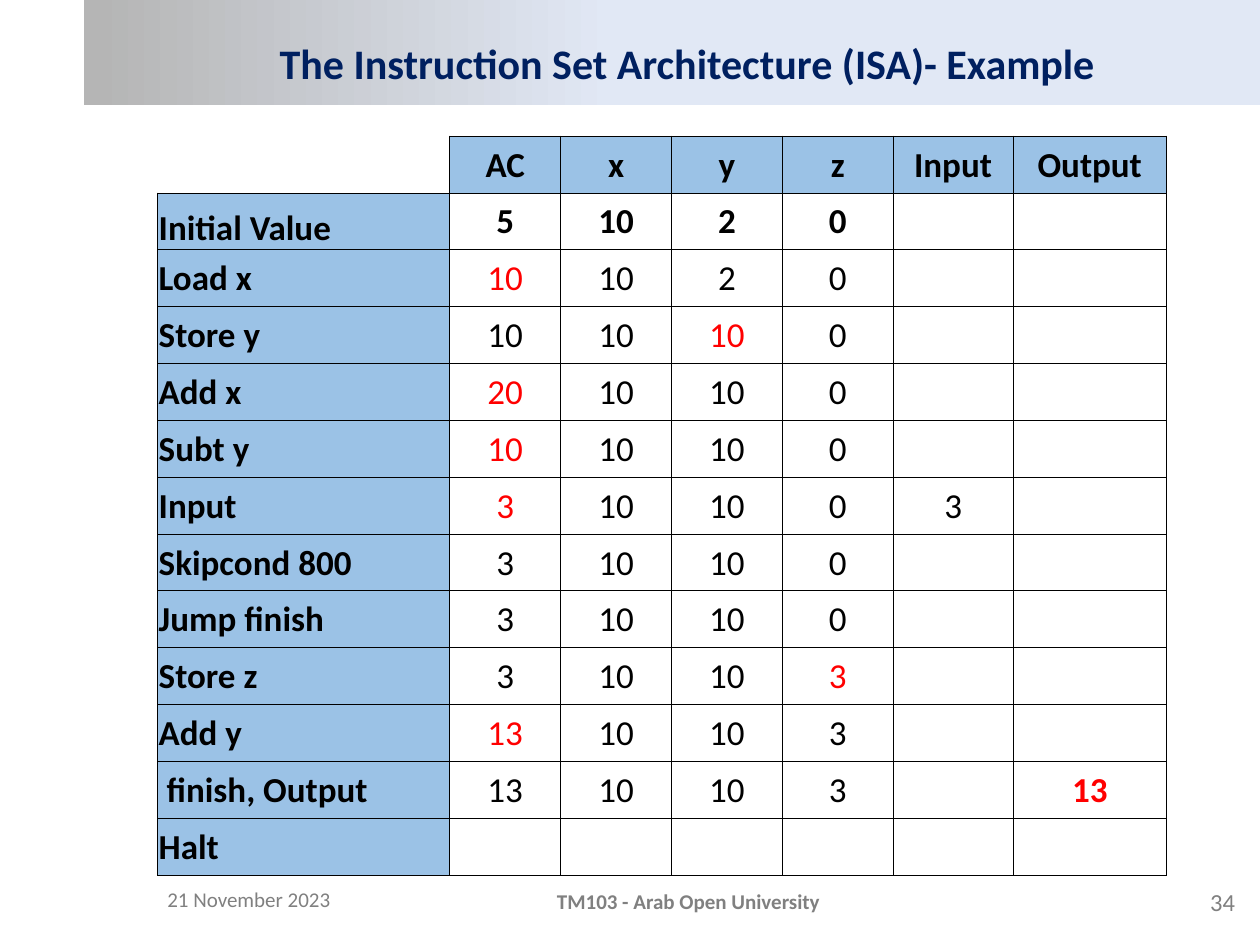
from dataclasses import dataclass

import pptx
import pptx.dml.color
import pptx.enum.text
import pptx.oxml
import pptx.oxml.ns
import pptx.util

Inches = pptx.util.Inches
Align = pptx.enum.text.PP_ALIGN
Anchor = pptx.enum.text.MSO_ANCHOR

WIDTH, HEIGHT = 10, 7.5
FONT = "Calibri"
BLACK, RED, GRAY, NAVY, BLUE = "000000", "FF0000", "808080", "002060", "9BC2E6"
TABLE_LEFT, TABLE_TOP, TABLE_HEIGHT = 1.25, 1.08, 5.87
COLUMN_WIDTHS = [2.32, 0.88, 0.88, 0.88, 0.88, 0.95, 1.22]


@dataclass
class Step:
    label: str
    values: str = ""
    changed: int = 0
    input: str = ""
    output: str = ""

    def cells(self) -> list[str]:
        registers = self.values.split() or [""] * 4
        return [self.label, *registers, self.input, self.output]


@dataclass
class Footer:
    text: str
    left: float
    top: float
    width: float
    size: int
    align: int
    bold: bool = False


HEADERS = ["", "AC", "x", "y", "z", "Input", "Output"]
STEPS = [
    Step("Initial Value", "5 10 2 0"),
    Step("Load x", "10 10 2 0", 1),
    Step("Store y", "10 10 10 0", 3),
    Step("Add x", "20 10 10 0", 1),
    Step("Subt y", "10 10 10 0", 1),
    Step("Input", "3 10 10 0", 1, input="3"),
    Step("Skipcond 800", "3 10 10 0"),
    Step("Jump finish", "3 10 10 0"),
    Step("Store z", "3 10 10 3", 4),
    Step("Add y", "13 10 10 3", 1),
    Step(" finish, Output", "13 10 10 3", 6, output="13"),
    Step("Halt"),
]
FOOTERS = [
    Footer("21 November 2023", 1.23, 6.94, 2.33, 12, Align.LEFT),
    Footer("TM103 - Arab Open University", 3.88, 6.95, 3.17, 12, Align.CENTER, True),
    Footer("34", 7.57, 6.96, 2.33, 14, Align.RIGHT),
]


def color(value: str) -> pptx.dml.color.RGBColor:
    return pptx.dml.color.RGBColor.from_string(value)


def write(frame, text: str, size: int, ink: str, bold: bool, align: int) -> None:
    frame.text = text
    para = frame.paragraphs[0]
    para.alignment = align
    for font in [para.font, *(span.font for span in para.runs)]:
        font.name = FONT
        font.size = pptx.util.Pt(size)
        font.bold = bold
        font.color.rgb = color(ink)


def add_band(page) -> None:
    left = WIDTH / 15
    band = page.shapes.add_shape(
        pptx.enum.shapes.MSO_SHAPE.RECTANGLE,
        Inches(left), 0, Inches(WIDTH - left), Inches(HEIGHT / 9),
    )
    band.shadow.inherit = False
    band.line.fill.background()
    band.fill.gradient()
    band.fill.gradient_angle = 0
    for stop, (position, shade) in zip(
        band.fill.gradient_stops, [(0.01, "B5B5B5"), (0.45, "E1E8F5")]
    ):
        stop.position = position
        stop.color.rgb = color(shade)
    page.shapes._spTree.insert(2, band._element)


def format_title(page) -> None:
    title = page.shapes.title
    title.left, title.top = Inches(0.91), Inches(0.25)
    title.width, title.height = Inches(9.09), Inches(0.5)
    frame = title.text_frame
    frame.vertical_anchor = Anchor.MIDDLE
    write(frame, "The Instruction Set Architecture (ISA)- Example", 24, NAVY, True, Align.CENTER)


def set_borders(cell, sides: str) -> None:
    properties = cell._tc.get_or_add_tcPr()
    for side in sides:
        properties.append(pptx.oxml.parse_xml(
            f'<a:ln{side} {pptx.oxml.ns.nsdecls("a")} w="6350"><a:solidFill>'
            f'<a:srgbClr val="{BLACK}"/></a:solidFill></a:ln{side}>'
        ))


def fill_cell(cell, text: str, row: int, column: int) -> None:
    corner = row == 0 and column == 0
    heading = row == 0 or column == 0
    changed = row > 0 and column > 0 and column == STEPS[row - 1].changed
    bold = heading or row == 1 or column == len(HEADERS) - 1
    set_borders(cell, "RB" if corner else "LRTB")
    if heading and not corner:
        cell.fill.solid()
        cell.fill.fore_color.rgb = color(BLUE)
    else:
        cell.fill.background()
    cell.margin_left = cell.margin_right = cell.margin_top = Inches(0.01)
    cell.margin_bottom = 0
    cell.vertical_anchor = Anchor.BOTTOM if (row, column) == (1, 0) else Anchor.MIDDLE
    write(cell.text_frame, text, 20, RED if changed else BLACK, bold,
          Align.CENTER if column else Align.LEFT)


def add_trace_table(page) -> None:
    rows = [HEADERS, *(step.cells() for step in STEPS)]
    table = page.shapes.add_table(
        len(rows), len(HEADERS), Inches(TABLE_LEFT), Inches(TABLE_TOP),
        Inches(sum(COLUMN_WIDTHS)), Inches(TABLE_HEIGHT),
    ).table
    table.first_row = table.horz_banding = False
    for column, width in zip(table.columns, COLUMN_WIDTHS):
        column.width = Inches(width)
    for row, texts in enumerate(rows):
        table.rows[row].height = Inches(TABLE_HEIGHT / len(rows))
        for column, text in enumerate(texts):
            fill_cell(table.cell(row, column), text, row, column)


def add_footer(page, footer: Footer) -> None:
    box = page.shapes.add_textbox(
        Inches(footer.left), Inches(footer.top), Inches(footer.width), Inches(0.4)
    )
    frame = box.text_frame
    frame.word_wrap = True
    frame.vertical_anchor = Anchor.MIDDLE
    write(frame, footer.text, footer.size, GRAY, footer.bold, footer.align)


def main() -> None:
    deck = pptx.Presentation()
    deck.slide_width, deck.slide_height = Inches(WIDTH), Inches(HEIGHT)
    page = deck.slides.add_slide(deck.slide_layouts[5])
    add_band(page)
    format_title(page)
    add_trace_table(page)
    for footer in FOOTERS:
        add_footer(page, footer)
    deck.save("out.pptx")


if __name__ == "__main__":
    main()
